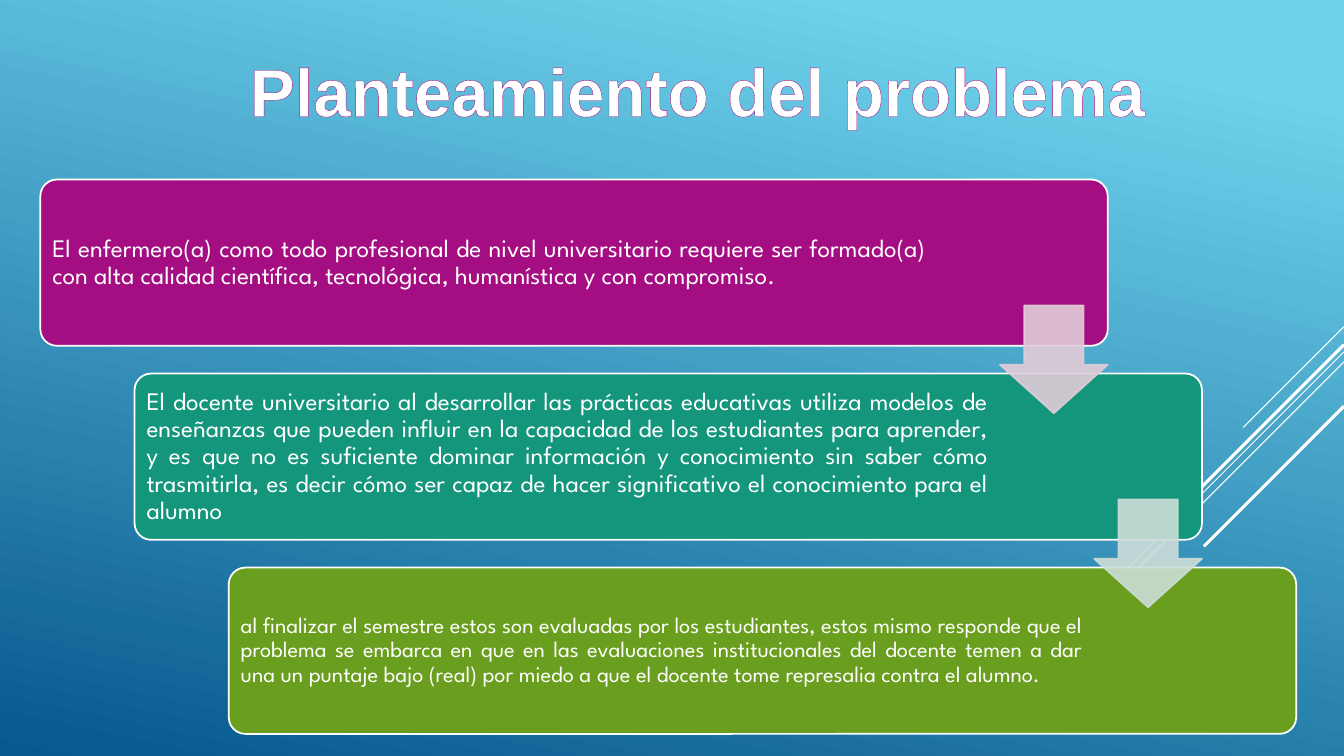
from lxml.etree import SubElement
from pptx import Presentation
from pptx.dml.color import RGBColor
from pptx.enum.shapes import MSO_CONNECTOR as Conn, MSO_SHAPE as Geom
from pptx.enum.text import MSO_ANCHOR as Anchor, PP_ALIGN as Align
from pptx.oxml.ns import qn
from pptx.util import Pt

WHITE = RGBColor(0xFF, 0xFF, 0xFF)
SKY = RGBColor(0x6E, 0xD2, 0xEB)
NAVY = RGBColor(0x06, 0x58, 0x8E)
PLUM = RGBColor(0xA5, 0x0E, 0x82)
TEAL = RGBColor(0x14, 0x96, 0x7C)
GREEN = RGBColor(0x6A, 0x9E, 0x1F)
ROSE = RGBColor(0xE1, 0xCC, 0xD8)
MINT = RGBColor(0xCC, 0xDD, 0xD7)

WIDTH, HEIGHT = 960, 540
LEFT, TOP = 28.8, 128.2
STEP_X, STEP_Y = 67.3, 138.6
BOX_W, BOX_H = 762.5, 118.8
ARROW = 77
INSET = 3.5

# Text, fill, text width, text size
STEPS = [
    ("El enfermero(a) como todo profesional de nivel universitario requiere "
     "ser formado(a) con alta calidad científica, tecnológica, humanística y "
     "con compromiso.", PLUM, 634.3, 18),
    ("El docente universitario al desarrollar las prácticas educativas "
     "utiliza modelos de enseñanzas que pueden influir en la capacidad de los "
     "estudiantes para aprender, y es que no es suficiente dominar "
     "información y conocimiento sin saber cómo trasmitirla, es decir cómo "
     "ser capaz de hacer significativo el conocimiento para el alumno",
     TEAL, 611.3, 18),
    ("al finalizar el semestre estos son evaluadas por los estudiantes, estos "
     "mismo responde que el problema se embarca en que en las evaluaciones "
     "institucionales del docente temen a dar una un puntaje bajo (real) por "
     "miedo a que el docente tome represalia contra el alumno.",
     GREEN, 611.3, 16),
]

# Height at the right edge, run to the lower left, line width
RAYS = [(233.3, 72, 0.75), (251.3, 234.7, 0.75), (258.5, 149.4, 0.75),
        (246.2, 137.5, 2.25), (290.2, 100.1, 2.25)]


def paint(slide):
    """Fill the background with a gradient from sky to navy."""
    fill = slide.background.fill
    fill.gradient()
    fill.gradient_angle = 360 - 102
    for stop, color, pos in zip(fill.gradient_stops, (SKY, NAVY), (0.1, 1)):
        stop.color.rgb = color
        stop.position = pos


def add_ray(slide, y, run, width):
    """Draw a diagonal line down from the slide's right edge."""
    ray = slide.shapes.add_connector(
        Conn.STRAIGHT, Pt(WIDTH), Pt(y), Pt(WIDTH - run), Pt(y + run))
    ray.line.color.rgb = WHITE
    ray.line.width = Pt(width)
    SubElement(ray._element.spPr, qn("a:effectLst"))


def add_text(slide, text, x, y, w, h, *, size, font, bold=False,
             align=Align.JUSTIFY, anchor=Anchor.MIDDLE, inset=5.04,
             wrap=True, space=0.9, edge=None):
    frame = slide.shapes.add_textbox(Pt(x), Pt(y), Pt(w), Pt(h)).text_frame
    frame.word_wrap = wrap
    frame.vertical_anchor = anchor
    frame.margin_left = frame.margin_right = Pt(inset)
    frame.margin_top = frame.margin_bottom = Pt(inset)
    para = frame.paragraphs[0]
    para.alignment = align
    para.line_spacing = space
    run = para.add_run()
    run.text = text
    run.font.size = Pt(size)
    run.font.name = font
    run.font.bold = bold
    run.font.color.rgb = WHITE
    if edge is not None:
        props = run.font._element
        line = SubElement(props, qn("a:ln"), w=str(Pt(0.52)))
        solid = SubElement(line, qn("a:solidFill"))
        SubElement(solid, qn("a:srgbClr"), val=str(edge))
        props.insert(0, line)


def add_form(slide, kind, x, y, w, h, fill, line, adjust, alpha=None):
    form = slide.shapes.add_shape(kind, Pt(x), Pt(y), Pt(w), Pt(h))
    form.shadow.inherit = False
    for i, value in enumerate(adjust):
        form.adjustments[i] = value
    form.fill.solid()
    form.fill.fore_color.rgb = fill
    form.line.color.rgb = line
    form.line.width = Pt(1.25)
    if alpha:
        for color in form._element.spPr.iter(qn("a:srgbClr")):
            SubElement(color, qn("a:alpha"), val=str(alpha * 1000))


def add_step(slide, i, text, fill, width, size):
    x, y = LEFT + i * STEP_X, TOP + i * STEP_Y
    add_form(slide, Geom.ROUNDED_RECTANGLE, x, y, BOX_W, BOX_H,
             fill, WHITE, [0.1])
    add_text(slide, text, x + INSET, y + INSET, width, BOX_H - 2 * INSET,
             size=size, font="League Spartan")


def add_arrow(slide, i, color):
    """Point from one step to the next, flush with the step's right side."""
    x = LEFT + i * STEP_X + BOX_W - ARROW
    y = TOP + i * STEP_Y + 90
    add_form(slide, Geom.DOWN_ARROW, x, y, ARROW, ARROW,
             color, color, [0.55, 0.45], alpha=90)


def main():
    deck = Presentation()
    deck.slide_width, deck.slide_height = Pt(WIDTH), Pt(HEIGHT)
    slide = deck.slides.add_slide(deck.slide_layouts[6])
    paint(slide)
    for ray in RAYS:
        add_ray(slide, *ray)
    add_text(slide, "Planteamiento del problema", 154.8, 31.7, 687.6, 65.5,
             size=48, font="Arial", bold=True, align=Align.CENTER,
             anchor=Anchor.TOP, inset=3.6, wrap=False, space=1, edge=PLUM)
    for i, step in enumerate(STEPS):
        add_step(slide, i, *step)
    for i, color in enumerate((ROSE, MINT)):
        add_arrow(slide, i, color)
    deck.save("out.pptx")


if __name__ == "__main__":
    main()
